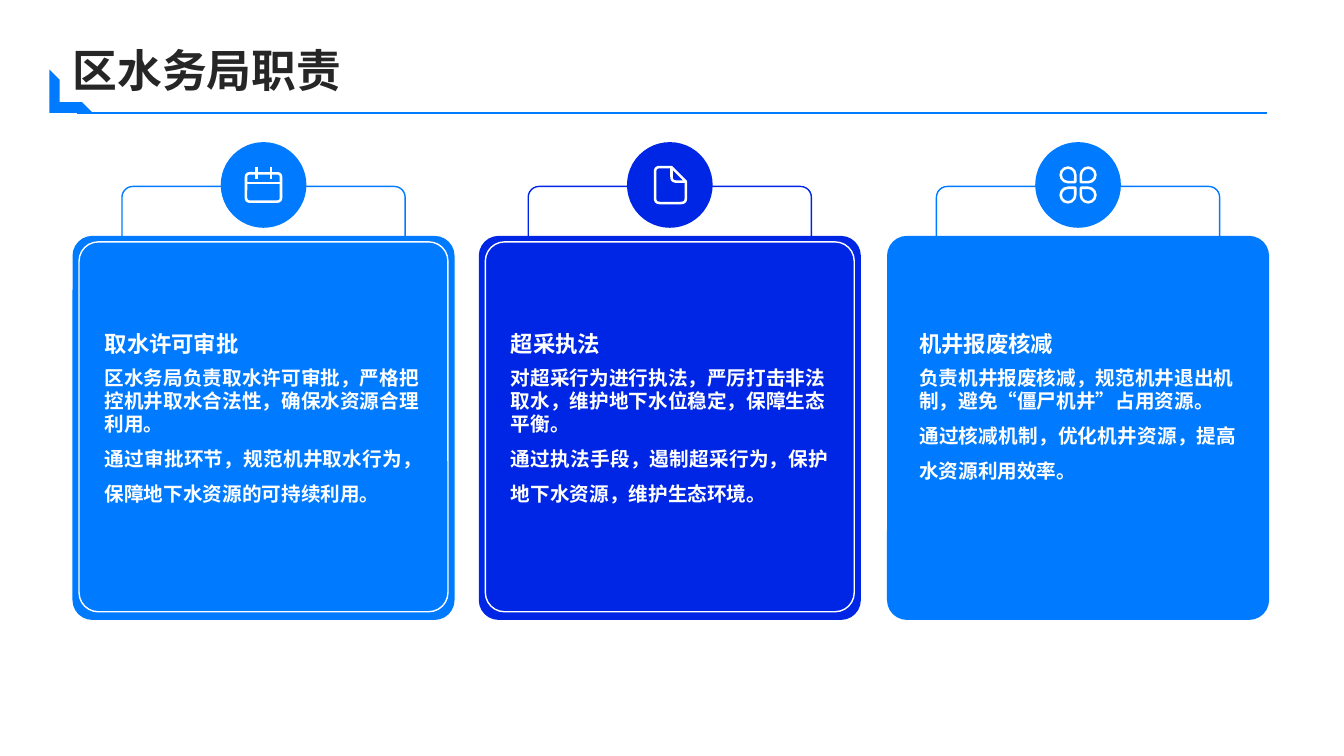
from lxml import etree
from pptx import Presentation
from pptx.dml.color import RGBColor
from pptx.enum.shapes import MSO_CONNECTOR, MSO_SHAPE
from pptx.enum.text import MSO_ANCHOR, PP_ALIGN
from pptx.oxml.ns import qn
from pptx.util import Pt

ROUNDED = MSO_SHAPE.ROUNDED_RECTANGLE
CIRCLE = MSO_SHAPE.OVAL
TEARDROP = MSO_SHAPE.TEAR
HALF_FRAME = MSO_SHAPE.HALF_FRAME
STRAIGHT = MSO_CONNECTOR.STRAIGHT
LEFT, JUSTIFY = PP_ALIGN.LEFT, PP_ALIGN.JUSTIFY
TOP, MIDDLE, BOTTOM = MSO_ANCHOR.TOP, MSO_ANCHOR.MIDDLE, MSO_ANCHOR.BOTTOM

BLUE = RGBColor(0x00, 0x7B, 0xFF)
DEEP_BLUE = RGBColor(0x00, 0x26, 0xE5)
WHITE = RGBColor(0xFF, 0xFF, 0xFF)
INK = RGBColor(0x26, 0x26, 0x26)
FONT = "Noto Sans CJK SC"

TITLE = "区水务局职责"
CARDS = [
    {"left": 51.8, "color": BLUE, "icon": "calendar", "framed": True,
     "heading": "取水许可审批",
     "body": ["区水务局负责取水许可审批，严格把控机井取水合法性，确保水资源合理利用。",
              "通过审批环节，规范机井取水行为，保障地下水资源的可持续利用。"]},
    {"left": 342, "color": DEEP_BLUE, "icon": "page", "framed": True,
     "heading": "超采执法",
     "body": ["对超采行为进行执法，严厉打击非法取水，维护地下水位稳定，保障生态平衡。",
              "通过执法手段，遏制超采行为，保护地下水资源，维护生态环境。"]},
    {"left": 633.6, "color": BLUE, "icon": "petals", "framed": False,
     "heading": "机井报废核减",
     "body": ["负责机井报废核减，规范机井退出机制，避免“僵尸机井”占用资源。",
              "通过核减机制，优化机井资源，提高水资源利用效率。"]},
]
CARD_WIDTH, CARD_TOP, CARD_HEIGHT = 272.9, 168.5, 274.3
FRAME_WIDTH, FRAME_TOP, FRAME_HEIGHT = 263.5, 172.8, 264.2
BRACKET_WIDTH, BRACKET_TOP, BRACKET_HEIGHT = 202.3, 133.2, 149
CIRCLE_SIZE, CIRCLE_TOP = 61.2, 101.5
TEXT_INDENT, TEXT_WIDTH = 23, 226.8
CORNER = 0.052
ICON_LINE = 1.8

deck = Presentation()
deck.slide_width, deck.slide_height = Pt(960), Pt(540)
page = deck.slides.add_slide(deck.slide_layouts[6])


def paint(shape, fill, line, width):
    shape.shadow.inherit = False
    if fill is None:
        shape.fill.background()
    else:
        shape.fill.solid()
        shape.fill.fore_color.rgb = fill
    if line is None:
        shape.line.fill.background()
    else:
        shape.line.color.rgb = line
        shape.line.width = Pt(width)


def add_shape(kind, left, top, width, height, fill=None, line=None, weight=1):
    shape = page.shapes.add_shape(kind, Pt(left), Pt(top), Pt(width), Pt(height))
    paint(shape, fill, line, weight)
    return shape


def add_panel(center, top, width, height, fill=None, line=None):
    panel = add_shape(ROUNDED, center - width / 2, top, width, height, fill, line)
    panel.adjustments[0] = CORNER


def add_line(x1, y1, x2, y2, color, weight):
    line = page.shapes.add_connector(STRAIGHT, Pt(x1), Pt(y1), Pt(x2), Pt(y2))
    line.line.color.rgb = color
    line.line.width = Pt(weight)
    etree.SubElement(line._element.spPr, qn("a:effectLst"))


def add_text(left, top, width, height, anchor, size, color, paragraphs):
    box = page.shapes.add_textbox(Pt(left), Pt(top), Pt(width), Pt(height))
    frame = box.text_frame
    frame.word_wrap = True
    frame.vertical_anchor = anchor
    frame.margin_left = frame.margin_right = frame.margin_top = frame.margin_bottom = 0
    frame.text = "\n".join(text for text, align, spacing in paragraphs)
    for para, (text, align, spacing) in zip(frame.paragraphs, paragraphs):
        para.alignment = align
        para.line_spacing = spacing
        font = para.runs[0].font
        font.size, font.bold, font.name = Pt(size), True, FONT
        font.color.rgb = color
        etree.SubElement(font._element, qn("a:ea")).set("typeface", FONT)


def toward(start, end, distance):
    dx, dy = end[0] - start[0], end[1] - start[1]
    ratio = distance / (dx * dx + dy * dy) ** 0.5
    return start[0] + dx * ratio, start[1] + dy * ratio


def add_outline(x, y, corners, closed):
    points = []
    for index, (cx, cy, radius) in enumerate(corners):
        if not radius:
            points.append((cx, cy))
            continue
        before = toward((cx, cy), corners[index - 1], radius)
        after = toward((cx, cy), corners[(index + 1) % len(corners)], radius)
        for step in range(7):
            t = step / 6
            weights = (1 - t) ** 2, 2 * t * (1 - t), t * t
            points.append(tuple(
                sum(w * p[axis] for w, p in zip(weights, (before, (cx, cy), after)))
                for axis in (0, 1)))
    points = [(Pt(x + px), Pt(y + py)) for px, py in points]
    builder = page.shapes.build_freeform(*points[0])
    builder.add_line_segments(points[1:], close=closed)
    paint(builder.convert_to_shape(), None, WHITE, ICON_LINE)


def draw_calendar(x, y):
    sheet = add_shape(ROUNDED, x - 12.5, y - 8.3, 25, 20.2, None, WHITE, ICON_LINE)
    sheet.adjustments[0] = 0.12
    add_line(x - 12.5, y - 1.4, x + 12.5, y - 1.4, WHITE, ICON_LINE)
    for peg in (-5.2, 5.2):
        add_line(x + peg, y - 12.5, x + peg, y - 4.5, WHITE, ICON_LINE)


def draw_page(x, y):
    add_outline(x, y, [(-10.5, -12.8, 3.5), (1.2, -12.8, 0), (11.5, -2.4, 0),
                       (11.5, 12.9, 3.5), (-10.5, 12.9, 3.5)], True)
    add_outline(x, y, [(1.2, -12.8, 0), (1.2, -2.4, 3.5), (11.5, -2.4, 0)], False)


def draw_petals(x, y):
    size, gap = 10.4, 2
    for turn, (across, down) in enumerate([(-1, 1), (-1, -1), (1, -1), (1, 1)]):
        reach = gap + size / 2
        petal = add_shape(TEARDROP, x + across * reach - size / 2,
                          y + down * reach - size / 2, size, size, None, WHITE, ICON_LINE)
        petal.rotation = 90 * turn


ICONS = {"calendar": draw_calendar, "page": draw_page, "petals": draw_petals}

for card in CARDS:
    center = card["left"] + CARD_WIDTH / 2
    color = card["color"]
    add_panel(center, BRACKET_TOP, BRACKET_WIDTH, BRACKET_HEIGHT, line=color)
    add_shape(CIRCLE, center - CIRCLE_SIZE / 2, CIRCLE_TOP, CIRCLE_SIZE, CIRCLE_SIZE, color)
    ICONS[card["icon"]](center, CIRCLE_TOP + CIRCLE_SIZE / 2)
    add_panel(center, CARD_TOP, CARD_WIDTH, CARD_HEIGHT, color)
    if card["framed"]:
        add_panel(center, FRAME_TOP, FRAME_WIDTH, FRAME_HEIGHT, color, WHITE)
    text_left = card["left"] + TEXT_INDENT
    duty, effect = card["body"]
    add_text(text_left, 261.2, TEXT_WIDTH, 157, TOP, 14, WHITE,
             [(duty, LEFT, Pt(16.7)), (effect, JUSTIFY, Pt(25))])
    add_text(text_left, 191, TEXT_WIDTH, 64, BOTTOM, 16, WHITE,
             [(card["heading"], JUSTIFY, 1.3)])

add_text(51.8, 31, 855.4, 36.7, MIDDLE, 32, INK, [(TITLE, JUSTIFY, 1.0)])
bracket = add_shape(HALF_FRAME, 35.3, 49.7, 31, 31, BLUE)
bracket.adjustments[0], bracket.adjustments[1] = 0.239, 0.252
bracket.rotation = 270
add_line(54.7, 80.6, 905, 80.6, BLUE, 1)

deck.save("out.pptx")
